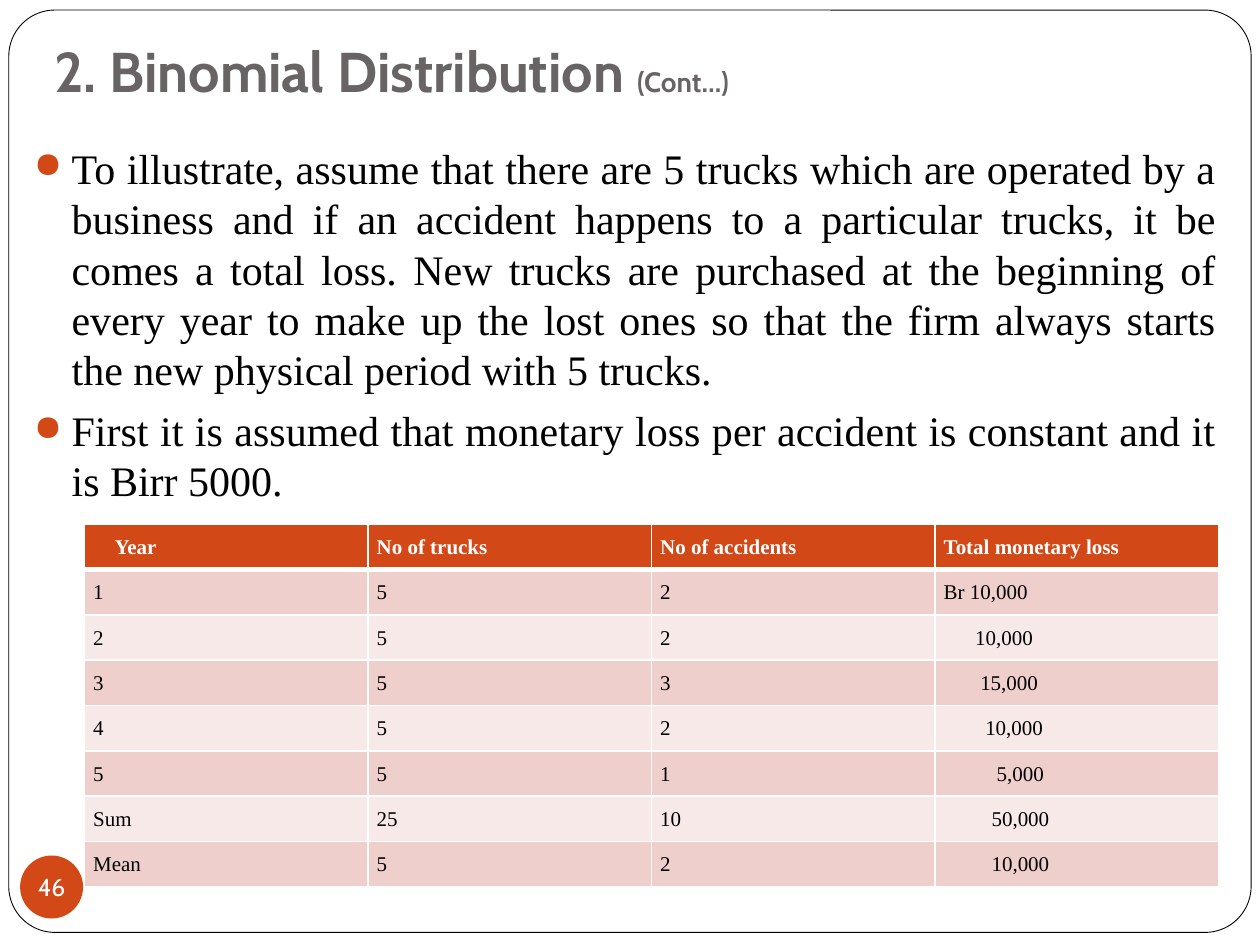
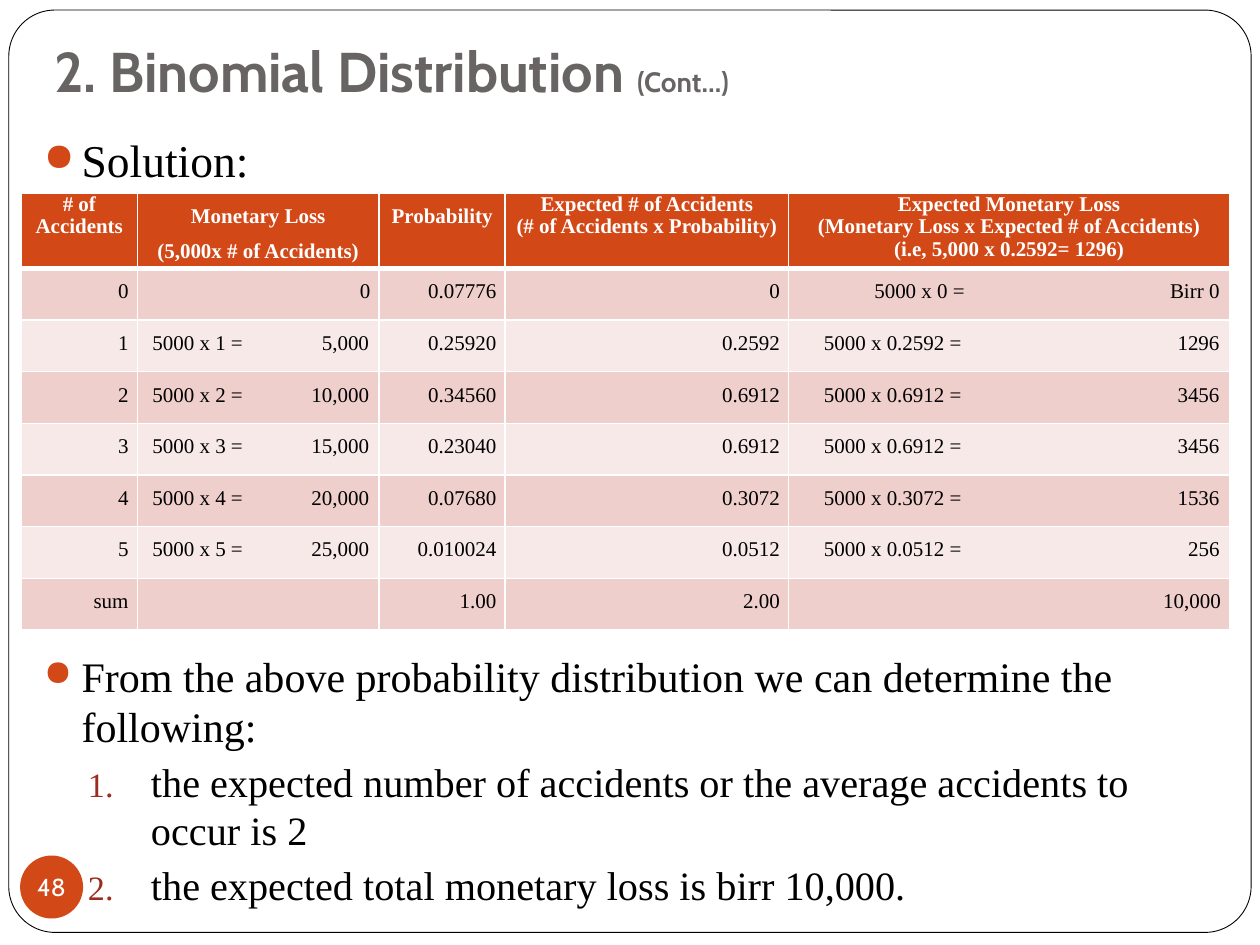
from lxml import etree
from pptx import Presentation
from pptx.dml.color import RGBColor
from pptx.enum.shapes import MSO_SHAPE
from pptx.enum.text import MSO_ANCHOR, MSO_AUTO_SIZE, PP_ALIGN
from pptx.oxml.ns import qn
from pptx.util import Inches, Pt

LEFT, CENTER, RIGHT, JUSTIFY = PP_ALIGN.LEFT, PP_ALIGN.CENTER, PP_ALIGN.RIGHT, PP_ALIGN.JUSTIFY
BOTTOM, MIDDLE, NO_FIT = MSO_ANCHOR.BOTTOM, MSO_ANCHOR.MIDDLE, MSO_AUTO_SIZE.NONE
ROUNDED, OVAL = MSO_SHAPE.ROUNDED_RECTANGLE, MSO_SHAPE.OVAL

WHITE = RGBColor(0xFF, 0xFF, 0xFF)
BLACK = RGBColor(0, 0, 0)
ORANGE = RGBColor(0xD3, 0x48, 0x17)
BRICK = RGBColor(0x9B, 0x2D, 0x1F)
GRAY = RGBColor(0x69, 0x64, 0x64)
BANDS = (RGBColor(0xF7, 0xE9, 0xE8), RGBColor(0xEF, 0xCF, 0xCC))
HEAD_FONT, BODY_FONT = "Cabin", "Times New Roman"
TITLE_ONLY = 5
CELL_INSET = 0.07

BULLET = {"margin": 0.3, "hang": 0.3, "before": 5.8, "color": ORANGE,
          "tag": "a:buChar", "attrs": {"char": "●"}}
NUMBER = {"margin": 0.85, "hang": 0.5, "before": 3.7, "color": BRICK,
          "tag": "a:buAutoNum", "attrs": {"type": "arabicPeriod"}}

TRUCK_ROWS = [
    [(0.17, "Year"), "No of trucks", "No of accidents", "Total monetary loss"],
    ["1", "5", "2", "Br 10,000"],
    ["2", "5", "2", (0.25, "10,000")],
    ["3", "5", "3", (0.29, "15,000")],
    ["4", "5", "2", (0.33, "10,000")],
    ["5", "5", "1", (0.42, "5,000")],
    ["Sum", "25", "10", (0.38, "50,000")],
    ["Mean", "5", "2", (0.38, "10,000")],
]
LOSS_ROWS = [
    ["# of\nAccidents", "Monetary Loss\n(5,000x # of Accidents)", "Probability",
     "Expected # of Accidents\n(# of Accidents x Probability)",
     "Expected Monetary Loss\n(Monetary Loss x Expected # of Accidents)\n"
     "(i.e, 5,000 x 0.2592= 1296)"],
    ["0", "0", "0.07776", "0", (0.61, "5000 x 0 =\tBirr 0")],
    ["1", (0.05, "5000 x 1 =\t5,000"), "0.25920", "0.2592", (0.21, "5000 x 0.2592 =\t1296")],
    ["2", (0.05, "5000 x 2 =\t10,000"), "0.34560", "0.6912", (0.21, "5000 x 0.6912 =\t3456")],
    ["3", (0.05, "5000 x 3 =\t15,000"), "0.23040", "0.6912", (0.21, "5000 x 0.6912 =\t3456")],
    ["4", (0.05, "5000 x 4 =\t20,000"), "0.07680", "0.3072", (0.21, "5000 x 0.3072 =\t1536")],
    ["5", (0.05, "5000 x 5 =\t25,000"), "0.010024", "0.0512", (0.21, "5000 x 0.0512 =\t256")],
    ["sum", "", "1.00", "2.00", "10,000"],
]


def box(left, top, width, height):
    return [Inches(v) for v in (left, top, width, height)]


def set_attrs(obj, values):
    for name, value in values.items():
        setattr(obj, name, value)


def set_margins(obj, left, top, right, bottom):
    set_attrs(obj, {"margin_left": Inches(left), "margin_top": Inches(top),
                    "margin_right": Inches(right), "margin_bottom": Inches(bottom)})


def add_run(p, text, font, size, color, bold=False):
    r = p.add_run()
    r.text = text
    set_attrs(r.font, {"name": font, "size": Pt(size), "bold": bold})
    r.font.color.rgb = color


def add_child(parent, tag, attrs=None):
    return etree.SubElement(parent, qn(tag), attrs or {})


def add_plain_shape(s, kind, place, fill):
    sp = s.shapes.add_shape(kind, *box(*place))
    sp.shadow.inherit = False
    sp.fill.solid()
    sp.fill.fore_color.rgb = fill
    return sp


def add_titled_slide(prs):
    s = prs.slides.add_slide(prs.slide_layouts[TITLE_ONLY])
    title = s.shapes.title
    set_attrs(title, dict(zip(("left", "top", "width", "height"), box(0.33, 0.3, 9.42, 0.62))))
    tf = title.text_frame
    set_attrs(tf, {"auto_size": NO_FIT, "vertical_anchor": BOTTOM, "word_wrap": True})
    set_margins(tf, 0.1, 0.05, 0.1, 0.1)
    p = tf.paragraphs[0]
    p.alignment = LEFT
    add_run(p, "2. Binomial Distribution ", HEAD_FONT, 32, GRAY, True)
    add_run(p, "(Cont…)", HEAD_FONT, 16, GRAY, True)

    frame = add_plain_shape(s, ROUNDED, (0.07, 0.08, 9.86, 7.32), WHITE)
    frame.adjustments[0] = 0.05
    frame.line.color.rgb = BLACK
    frame.line.width = Pt(0.5)
    title.element.addprevious(frame.element)
    return s


def add_page_number(s, number):
    sp = add_plain_shape(s, OVAL, (0.16, 6.79, 0.5, 0.5), ORANGE)
    sp.line.fill.background()
    tf = sp.text_frame
    set_attrs(tf, {"word_wrap": False, "vertical_anchor": MIDDLE})
    set_margins(tf, 0, 0, 0, 0)
    p = tf.paragraphs[0]
    p.alignment = CENTER
    add_run(p, str(number), HEAD_FONT, 14, WHITE)


def add_list(s, place, items, align=LEFT):
    tf = s.shapes.add_textbox(*box(*place)).text_frame
    tf.word_wrap = True
    for i, (style, size, text) in enumerate(items):
        p = tf.add_paragraph() if i else tf.paragraphs[0]
        set_attrs(p, {"alignment": align, "line_spacing": Pt(1.2 * size),
                      "space_before": Pt(style["before"] if i else 0)})
        pPr = p._p.get_or_add_pPr()
        pPr.set("marL", str(Inches(style["margin"])))
        pPr.set("indent", str(-Inches(style["hang"])))
        add_child(add_child(pPr, "a:buClr"), "a:srgbClr", {"val": str(style["color"])})
        add_child(pPr, "a:buSzPct", {"val": "85000"})
        add_child(pPr, style["tag"], style["attrs"])
        add_run(p, text, BODY_FONT, size, BLACK)


def set_borders(cell, top, bottom):
    tcPr = cell._tc.get_or_add_tcPr()
    for side, width in (("L", 1), ("R", 1), ("T", top), ("B", bottom)):
        ln = add_child(tcPr, "a:ln" + side, {"w": str(Pt(width))})
        add_child(add_child(ln, "a:solidFill"), "a:srgbClr", {"val": str(WHITE)})


def write_cell(cell, content, width, align, spacing, color, bold):
    indent, text = content if isinstance(content, tuple) else (0, content)
    tabbed = "\t" in text
    for i, line in enumerate(text.split("\n") if text else []):
        p = cell.text_frame.add_paragraph() if i else cell.text_frame.paragraphs[0]
        set_attrs(p, {"alignment": LEFT if tabbed else align, "line_spacing": spacing})
        pPr = p._p.get_or_add_pPr()
        if tabbed:
            line = "\t" + line
            tabs = add_child(pPr, "a:tabLst")
            for stop, side in ((indent, "l"), (width - 2 * CELL_INSET - 0.01, "r")):
                add_child(tabs, "a:tab", {"pos": str(Inches(stop)), "algn": side})
        elif indent:
            pPr.set("marL", str(Inches(indent)))
        add_run(p, line, BODY_FONT, 12, color, bold)


def add_data_table(s, place, rows, widths, row_height, head_align, align, tight_heads=()):
    left, top, width, height = place
    sp = s.shapes.add_table(len(rows), len(widths),
                            *box(left, top, width, row_height * len(rows)))
    table = sp.table
    for column, w in zip(table.columns, widths):
        column.width = Inches(w)
    for i, row in enumerate(rows):
        head = i == 0
        for j, content in enumerate(row):
            cell = table.cell(i, j)
            set_margins(cell, CELL_INSET, 0, CELL_INSET, 0)
            set_borders(cell, 3 if i == 1 else 1, 3 if head else 1)
            cell.fill.solid()
            cell.fill.fore_color.rgb = ORANGE if head else BANDS[i % 2]
            spacing = Pt(13.1) if head and j in tight_heads else 1.5
            write_cell(cell, content, widths[j], head_align if head else align,
                       spacing, WHITE if head else BLACK, head)
    sp.height = Inches(height)


def add_truck_slide(prs):
    s = add_titled_slide(prs)
    add_list(s, (0.17, 1.08, 9.58, 3), [
        (BULLET, 24, "To illustrate, assume that there are 5 trucks which are operated by a "
                     "business and if an accident happens to a particular trucks, it be comes "
                     "a total loss. New trucks are purchased at the beginning of every year to "
                     "make up the lost ones so that the firm always starts the new physical "
                     "period with 5 trucks."),
        (BULLET, 24, "First it is assumed that monetary loss per accident is constant and it "
                     "is Birr 5000."),
    ], JUSTIFY)
    add_data_table(s, (0.67, 4.16, 9, 2.92), TRUCK_ROWS, [2.25] * 4, 0.36, LEFT, LEFT)
    add_page_number(s, 46)


def add_solution_slide(prs):
    s = add_titled_slide(prs)
    add_list(s, (0.25, 1, 9.5, 0.5), [(BULLET, 26, "Solution:")])
    add_list(s, (0.25, 5.11, 9.5, 2.14), [
        (BULLET, 24, "From the above probability distribution we can determine the following:"),
        (NUMBER, 23, "the expected number of accidents or the average accidents to occur is 2"),
        (NUMBER, 23, "the expected total monetary loss is birr 10,000."),
    ])
    add_data_table(s, (0.17, 1.53, 9.58, 3.44), LOSS_ROWS, [0.92, 1.92, 1, 2.25, 3.5],
                   0.41, CENTER, RIGHT, tight_heads=(0, 3, 4))
    add_page_number(s, 48)


def main():
    prs = Presentation()
    prs.slide_width, prs.slide_height = Inches(10), Inches(7.5)
    add_truck_slide(prs)
    add_solution_slide(prs)
    prs.save("out.pptx")


if __name__ == "__main__":
    main()
